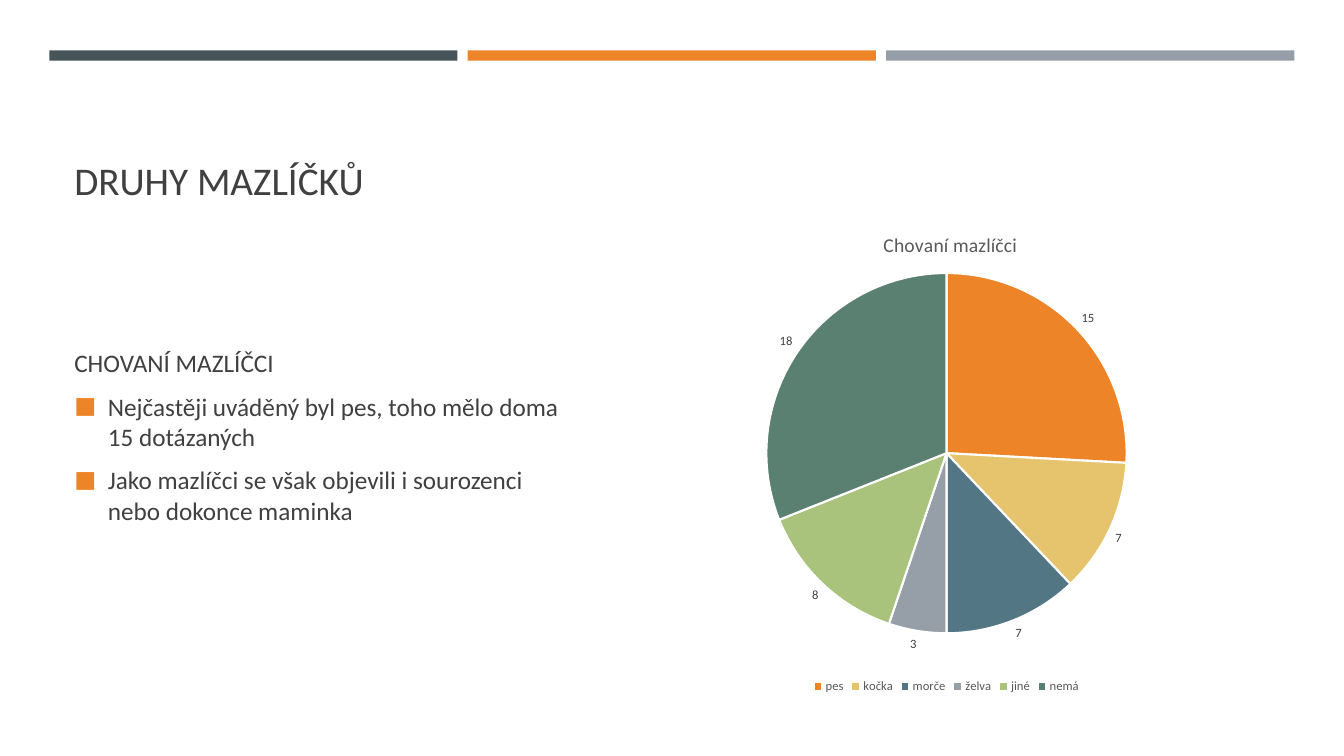
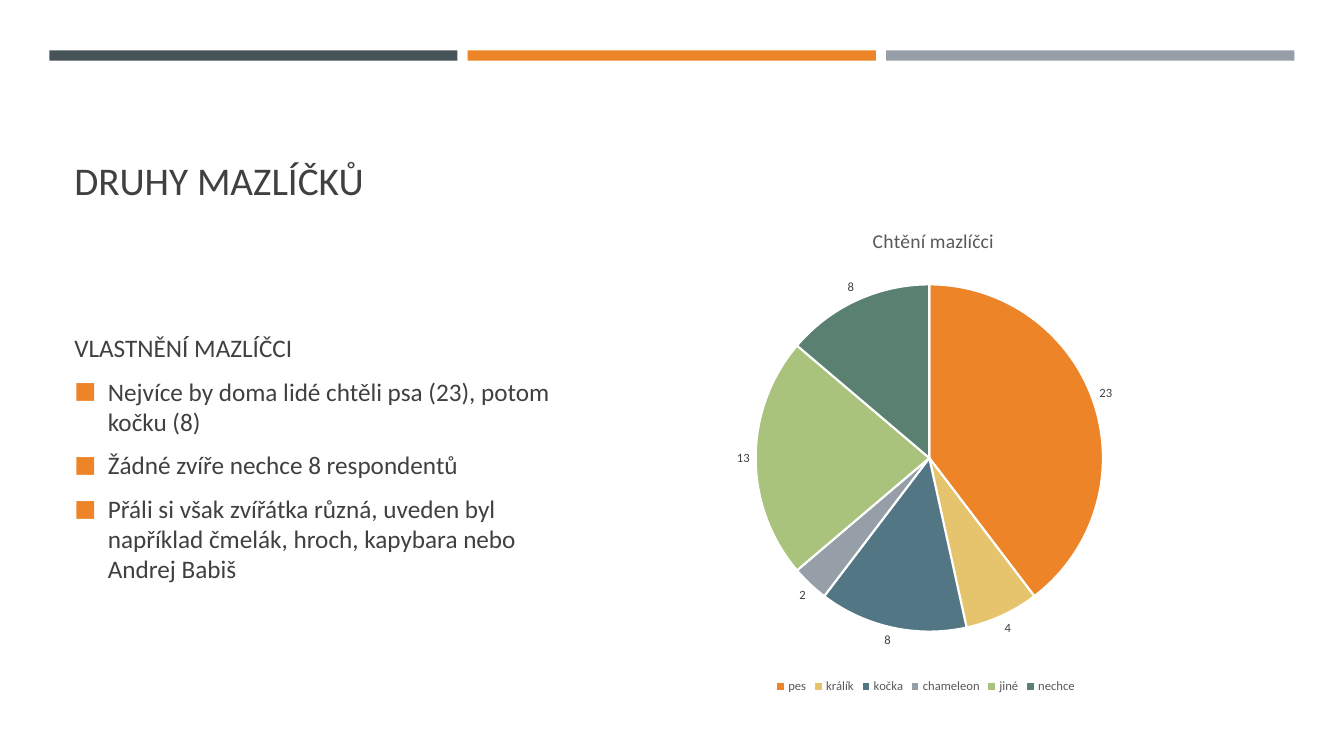
from dataclasses import dataclass

from lxml.etree import SubElement
from pptx import Presentation
from pptx.chart.data import CategoryChartData
from pptx.dml.color import RGBColor
from pptx.enum.chart import XL_CHART_TYPE as ChartType
from pptx.enum.chart import XL_LABEL_POSITION as LabelPosition
from pptx.enum.chart import XL_LEGEND_POSITION as LegendPosition
from pptx.enum.shapes import MSO_SHAPE as Shape
from pptx.enum.text import MSO_ANCHOR as Anchor
from pptx.oxml.ns import qn
from pptx.util import Pt

FONT = "Calibri"
COLORS = {
    "slate": "465359",
    "orange": "ED8428",
    "gray": "969FA7",
    "yellow": "E6C46D",
    "blue": "537685",
    "green": "A9C37C",
    "teal": "5A8071",
    "text": "404040",
    "muted": "595959",
    "white": "FFFFFF",
}
BANDS = ("slate", "orange", "gray")
SLICES = ("orange", "yellow", "blue", "gray", "green", "teal")
BAND_LEFT, BAND_TOP, BAND_WIDTH, BAND_HEIGHT, BAND_STEP = 35.2, 36, 291.6, 7.4, 298.9
TEXT_LEFT, TITLE_TOP, TITLE_WIDTH, TITLE_HEIGHT = 46, 55.4, 868.3, 93.6
BODY_TOP, BODY_WIDTH = 184.3, 374.4
CHART_TOP, CHART_RIGHT, CHART_HEIGHT = 149, 914.4, 349.5
BULLET_INDENT = 24


@dataclass(frozen=True)
class Pie:
    title: str
    values: dict[str, int]
    width: float
    title_area: dict[str, float]
    plot_area: dict[str, float]


@dataclass(frozen=True)
class PetSlide:
    heading: str
    bullets: tuple[str, ...]
    body_height: float
    pie: Pie


SLIDES = (
    PetSlide(
        "CHOVANÍ MAZLÍČCI",
        (
            "Nejčastěji uváděný byl pes, toho mělo doma 15 dotázaných",
            "Jako mazlíčci se však objevili i sourozenci nebo dokonce maminka",
        ),
        254.6,
        Pie(
            "Chovaní mazlíčci",
            {"pes": 15, "kočka": 7, "morče": 7, "želva": 3, "jiné": 8, "nemá": 18},
            476.6,
            {"x": 0.4, "y": 0.04},
            {"x": 0.23, "y": 0.13, "w": 0.54, "h": 0.74},
        ),
    ),
    PetSlide(
        "VLASTNĚNÍ MAZLÍČCI",
        (
            "Nejvíce by doma lidé chtěli psa (23), potom kočku (8)",
            "Žádné zvíře nechce 8 respondentů",
            "Přáli si však zvířátka různá, uveden byl například čmelák, "
            "hroch, kapybara nebo Andrej Babiš",
        ),
        285.8,
        Pie(
            "Chtění mazlíčci",
            {"pes": 23, "králík": 4, "kočka": 8, "chameleon": 2, "jiné": 13, "nechce": 8},
            506.2,
            {"x": 0.42, "y": 0.03},
            {"x": 0.26, "y": 0.15, "w": 0.49, "h": 0.72},
        ),
    ),
)


def color(name: str) -> RGBColor:
    return RGBColor.from_string(COLORS[name])


def style_font(font, size: float, color_name: str) -> None:
    font.name = FONT
    font.size = Pt(size)
    font.bold = False
    font.color.rgb = color(color_name)


def add_span(para, text: str, size: float) -> None:
    span = para.add_run()
    span.text = text
    style_font(span.font, size, "text")


def add_text_frame(page, top: float, width: float, height: float, anchor):
    box = page.shapes.add_textbox(Pt(TEXT_LEFT), Pt(top), Pt(width), Pt(height))
    frame = box.text_frame
    frame.word_wrap = True
    frame.vertical_anchor = anchor
    return frame


def add_bands(page) -> None:
    for index, name in enumerate(BANDS):
        band = page.shapes.add_shape(
            Shape.RECTANGLE, Pt(BAND_LEFT + index * BAND_STEP), Pt(BAND_TOP),
            Pt(BAND_WIDTH), Pt(BAND_HEIGHT),
        )
        band.shadow.inherit = False
        band.fill.solid()
        band.fill.fore_color.rgb = color(name)
        band.line.fill.background()


def add_title(page, text: str) -> None:
    frame = add_text_frame(page, TITLE_TOP, TITLE_WIDTH, TITLE_HEIGHT, Anchor.BOTTOM)
    add_span(frame.paragraphs[0], text, 28)


def set_bullet(para) -> None:
    properties = para._p.get_or_add_pPr()
    properties.set("marL", str(Pt(BULLET_INDENT)))
    properties.set("indent", str(-Pt(BULLET_INDENT)))
    bullet_color = SubElement(properties, qn("a:buClr"))
    SubElement(bullet_color, qn("a:srgbClr"), val=COLORS["orange"])
    SubElement(properties, qn("a:buSzPct"), val="92000")
    SubElement(properties, qn("a:buFont"), typeface=FONT)
    SubElement(properties, qn("a:buChar"), char="■")


def add_body(page, content: PetSlide) -> None:
    frame = add_text_frame(page, BODY_TOP, BODY_WIDTH, content.body_height, Anchor.MIDDLE)
    for index, text in enumerate((content.heading, *content.bullets)):
        para = frame.add_paragraph() if index else frame.paragraphs[0]
        para.space_before = Pt(3.5)
        para.space_after = Pt(6)
        if index:
            set_bullet(para)
        add_span(para, text, 18)


def set_layout(parent, position: int, area: dict[str, float], inner: bool) -> None:
    for old_layout in parent.findall(qn("c:layout")):
        parent.remove(old_layout)
    layout = SubElement(parent, qn("c:layout"))
    parent.insert(position, layout)
    manual = SubElement(layout, qn("c:manualLayout"))
    if inner:
        SubElement(manual, qn("c:layoutTarget"), val="inner")
    for axis in ("x", "y"):
        SubElement(manual, qn(f"c:{axis}Mode"), val="edge")
    for key, value in area.items():
        SubElement(manual, qn(f"c:{key}"), val=str(value))


def add_pie(page, pie: Pie) -> None:
    data = CategoryChartData()
    data.categories = list(pie.values)
    data.add_series("Series 1", list(pie.values.values()))
    chart = page.shapes.add_chart(
        ChartType.PIE, Pt(CHART_RIGHT - pie.width), Pt(CHART_TOP),
        Pt(pie.width), Pt(CHART_HEIGHT), data,
    ).chart
    chart.font.name = FONT
    chart.font.size = Pt(10)

    chart.has_title = True
    span = chart.chart_title.text_frame.paragraphs[0].add_run()
    span.text = pie.title
    style_font(span.font, 14, "muted")

    chart.has_legend = True
    chart.legend.position = LegendPosition.BOTTOM
    chart.legend.include_in_layout = False
    style_font(chart.legend.font, 9, "muted")

    plot = chart.plots[0]
    plot.vary_by_categories = True
    plot.has_data_labels = True
    labels = plot.data_labels
    labels.show_value = True
    labels.show_percentage = False
    labels.position = LabelPosition.OUTSIDE_END
    style_font(labels.font, 9, "text")
    for index, name in enumerate(SLICES):
        piece = plot.series[0].points[index].format
        piece.fill.solid()
        piece.fill.fore_color.rgb = color(name)
        piece.line.color.rgb = color("white")
        piece.line.width = Pt(1.5)

    root = chart.element
    set_layout(root.find(".//" + qn("c:title")), 1, pie.title_area, False)
    set_layout(root.find(".//" + qn("c:plotArea")), 0, pie.plot_area, True)


def main() -> None:
    deck = Presentation()
    deck.slide_width = Pt(960)
    deck.slide_height = Pt(540)
    for content in SLIDES:
        page = deck.slides.add_slide(deck.slide_layouts[6])
        add_bands(page)
        add_title(page, "DRUHY MAZLÍČKŮ")
        add_body(page, content)
        add_pie(page, content.pie)
    deck.save("out.pptx")


if __name__ == "__main__":
    main()
